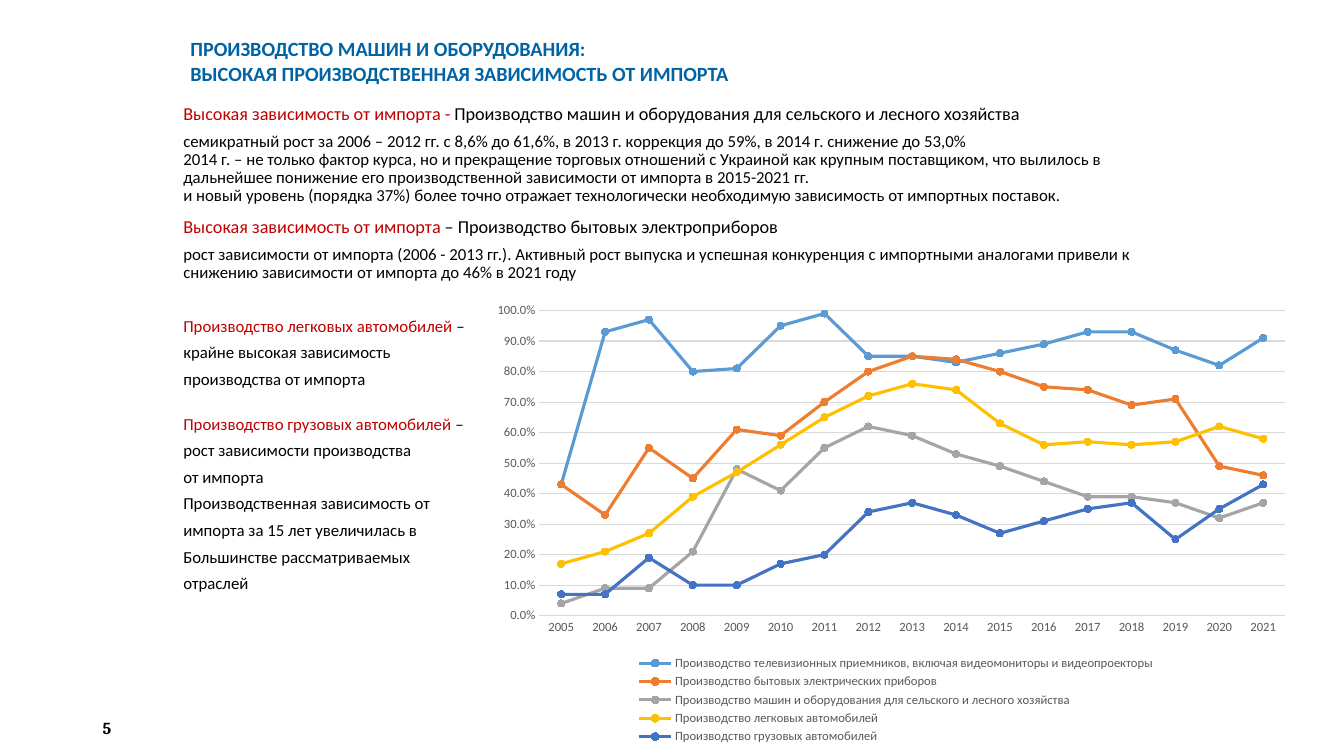
"""Build a slide on import dependence in machinery production, with a line chart."""
from typing import NamedTuple

from lxml import etree
from pptx import Presentation
from pptx import util as u
from pptx.chart import data as chart_data
from pptx.dml.color import RGBColor
from pptx.enum import chart as charts
from pptx.enum import text
from pptx.oxml import ns

RED, BLACK, BLUE, GREY, PALE = "C00000", "000000", "0063A4", "595959", "D9D9D9"


class Span(NamedTuple):
    words: str
    color: str = BLACK
    size: float = 12
    bold: bool = False
    font: str = "Calibri"


class Para(NamedTuple):
    spans: list[Span]
    before: float = 6
    spacing: float = 0.9


class Box(NamedTuple):
    left: float
    top: float
    width: float
    height: float
    paras: list[Para]
    anchor: text.MSO_ANCHOR = text.MSO_ANCHOR.MIDDLE


class Series(NamedTuple):
    name: str
    color: str
    percents: list[int]


def plain(words: str) -> Para:
    return Para([Span(words)])


BOXES = [
    Box(1.79, 0.3, 9.74, 0.61, [Para([Span(
        "ПРОИЗВОДСТВО МАШИН И ОБОРУДОВАНИЯ:\n"
        "ВЫСОКАЯ ПРОИЗВОДСТВЕННАЯ ЗАВИСИМОСТЬ ОТ ИМПОРТА",
        BLUE, 14.4, True)], 0, 1)]),
    Box(1.72, 0.99, 10.07, 5.99, [
        Para([Span("Высокая зависимость от импорта - ", RED, 13),
              Span("Производство машин и оборудования для сельского и лесного хозяйства",
                   size=13)], 0),
        plain("семикратный рост за 2006 – 2012 гг. с 8,6% до 61,6%, в 2013 г. коррекция "
              "до 59%, в 2014 г. снижение до 53,0%\n"
              "2014 г. – не только фактор курса, но и прекращение торговых отношений "
              "с Украиной как крупным поставщиком, что вылилось в\n"
              "дальнейшее понижение его производственной зависимости от импорта "
              "в 2015-2021 гг.\n"
              "и новый уровень (порядка 37%) более точно отражает технологически "
              "необходимую зависимость от импортных поставок."),
        Para([Span("Высокая зависимость от импорта", RED, 13),
              Span(" – Производство бытовых электроприборов", size=13)], 9),
        plain("рост зависимости от импорта (2006 - 2013 гг.). Активный рост выпуска "
              "и успешная конкуренция с импортными аналогами привели к "
              "снижению зависимости от импорта до 46% в 2021 году"),
        Para([Span("Производство легковых автомобилей ", RED), Span("–")], 25.2),
        plain("крайне высокая зависимость"),
        plain("производства от импорта"),
        Para([Span("Производство грузовых автомобилей", RED), Span(" –")], 19.2),
        plain("рост зависимости производства"),
        plain("от импорта"),
        plain("Производственная зависимость от"),
        plain("импорта за 15 лет увеличилась в"),
        plain("Большинстве рассматриваемых"),
        plain("отраслей"),
    ], text.MSO_ANCHOR.TOP),
    Box(0.92, 7.02, 3, 0.4, [Para([Span("5", bold=True, font="Cambria")], 0, 1)]),
]

SERIES = [
    Series("Производство телевизионных приемников, включая видеомониторы и видеопроекторы",
           "5B9BD5",
           [43, 93, 97, 80, 81, 95, 99, 85, 85, 83, 86, 89, 93, 93, 87, 82, 91]),
    Series("Производство бытовых электрических приборов", "ED7D31",
           [43, 33, 55, 45, 61, 59, 70, 80, 85, 84, 80, 75, 74, 69, 71, 49, 46]),
    Series("Производство машин и оборудования для сельского и лесного хозяйства", "A5A5A5",
           [4, 9, 9, 21, 48, 41, 55, 62, 59, 53, 49, 44, 39, 39, 37, 32, 37]),
    Series("Производство легковых автомобилей", "FFC000",
           [17, 21, 27, 39, 47, 56, 65, 72, 76, 74, 63, 56, 57, 56, 57, 62, 58]),
    Series("Производство грузовых автомобилей", "4472C4",
           [7, 7, 19, 10, 10, 17, 20, 34, 37, 33, 27, 31, 35, 37, 25, 35, 43]),
]


def rgb(color: str) -> RGBColor:
    return RGBColor.from_string(color)


def style(font, size: float, color: str, name: str = "Calibri", bold: bool = False) -> None:
    font.size, font.name, font.bold = u.Pt(size), name, bold
    font.color.rgb = rgb(color)


def draw_line(line, color: str, width: float) -> None:
    line.color.rgb = rgb(color)
    line.width = u.Pt(width)


def add_box(page, box: Box) -> None:
    shape = page.shapes.add_textbox(
        *(u.Inches(side) for side in (box.left, box.top, box.width, box.height)))
    frame = shape.text_frame
    frame.word_wrap = True
    frame.vertical_anchor = box.anchor
    for index, para in enumerate(box.paras):
        paragraph = frame.add_paragraph() if index else frame.paragraphs[0]
        paragraph.space_before = u.Pt(para.before)
        paragraph.line_spacing = para.spacing
        for span in para.spans:
            for row, words in enumerate(span.words.split("\n")):
                if row:
                    paragraph.add_line_break()
                run = paragraph.add_run()
                run.text = words
                style(run.font, span.size, span.color, span.font, span.bold)


def make_layout(target: str, x: float, y: float, w: float, h: float):
    layout = etree.Element(ns.qn("c:layout"))
    manual = etree.SubElement(layout, ns.qn("c:manualLayout"))
    settings = {"xMode": "edge", "yMode": "edge", "x": x, "y": y, "w": w, "h": h}
    if target:
        settings = {"layoutTarget": target, **settings}
    for tag, value in settings.items():
        etree.SubElement(manual, ns.qn(f"c:{tag}")).set("val", str(value))
    return layout


def add_dependence_chart(page) -> None:
    values = chart_data.CategoryChartData(number_format="0.0%")
    values.categories = [str(year) for year in range(2005, 2022)]
    for series in SERIES:
        values.add_series(series.name, [percent / 100 for percent in series.percents])
    chart = page.shapes.add_chart(
        charts.XL_CHART_TYPE.LINE_MARKERS, u.Inches(4.78), u.Inches(2.9),
        u.Inches(8.13), u.Inches(4.52), values).chart
    style(chart.font, 10, BLACK)
    chart.has_title = False
    chart.plots[0].vary_by_categories = False

    for line, series in zip(chart.plots[0].series, SERIES):
        line.smooth = False
        draw_line(line.format.line, series.color, 2.25)
        line.marker.style = charts.XL_MARKER_STYLE.CIRCLE
        line.marker.size = 5
        line.marker.format.fill.solid()
        line.marker.format.fill.fore_color.rgb = rgb(series.color)
        draw_line(line.marker.format.line, series.color, 0.75)

    years, shares = chart.category_axis, chart.value_axis
    for axis in (years, shares):
        axis.major_tick_mark = axis.minor_tick_mark = charts.XL_TICK_MARK.NONE
        style(axis.tick_labels.font, 9, GREY)
    draw_line(years.format.line, PALE, 0.75)
    shares.format.line.fill.background()
    shares.minimum_scale, shares.maximum_scale, shares.major_unit = 0, 1, 0.1
    shares.tick_labels.number_format = "0.0%"
    shares.tick_labels.number_format_is_linked = False
    draw_line(shares.major_gridlines.format.line, PALE, 0.75)

    chart.has_legend = True
    chart.legend.position = charts.XL_LEGEND_POSITION.BOTTOM
    chart.legend.include_in_layout = False
    style(chart.legend.font, 9, GREY)

    root = chart.element
    for old in root.findall(f".//{ns.qn('c:layout')}"):
        old.getparent().remove(old)
    root.find(f".//{ns.qn('c:plotArea')}").insert(
        0, make_layout("inner", 0.07, 0.04, 0.91, 0.67))
    root.find(f".//{ns.qn('c:legendPos')}").addnext(
        make_layout("", 0.18, 0.79, 0.65, 0.21))


def main() -> None:
    deck = Presentation()
    deck.slide_width, deck.slide_height = u.Inches(13.33), u.Inches(7.5)
    page = deck.slides.add_slide(deck.slide_layouts[6])
    for box in BOXES:
        add_box(page, box)
    add_dependence_chart(page)
    deck.save("out.pptx")


if __name__ == "__main__":
    main()
